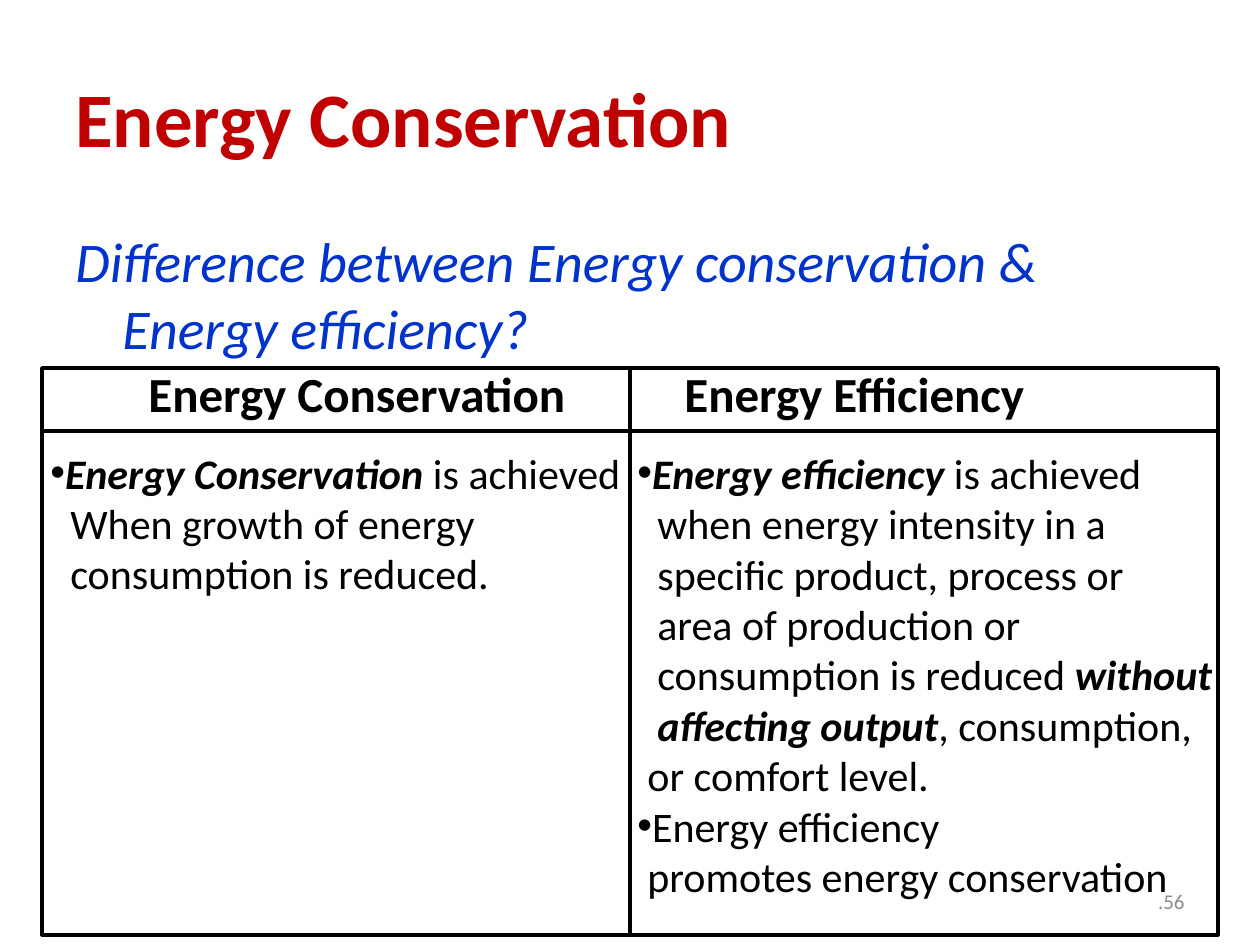
from dataclasses import dataclass

from lxml import etree
from pptx import Presentation
from pptx.dml.color import RGBColor
from pptx.enum.shapes import MSO_CONNECTOR, MSO_SHAPE
from pptx.enum.text import MSO_ANCHOR, MSO_AUTO_SIZE, PP_ALIGN
from pptx.oxml.ns import qn
from pptx.util import Pt

PX = 7257.14  # EMU per px, at 126 px to the inch
SPACE = 10  # px, width of one space in the comparison text


@dataclass(frozen=True)
class Theme:
    font: str = "Calibri"
    black: str = "000000"
    red: str = "C00000"
    blue: str = "0033CC"
    grey: str = "8C8C8C"
    title: int = 44
    question: int = 32
    heading: int = 28
    body: int = 24
    number: int = 12
    rule: int = 2


THEME = Theme()
STRONG = {"bold": True, "italic": True}

# Each line: indent in spaces, bulleted or not, runs of (text, format)
CONSERVATION = [
    (0, True, [("Energy Conservation ", STRONG), ("is achieved", {})]),
    (2, False, [("When growth of energy", {})]),
    (2, False, [("consumption is reduced.", {})]),
]
EFFICIENCY = [
    (0, True, [("Energy efficiency ", STRONG), ("is achieved", {})]),
    (2, False, [("when energy intensity in a", {})]),
    (2, False, [("specific product, process or", {})]),
    (2, False, [("area of production or", {})]),
    (2, False, [("consumption is reduced ", {}), ("without", STRONG)]),
    (2, False, [("affecting output", STRONG), (", consumption,", {})]),
    (1, False, [("or comfort level.", {})]),
    (0, True, [("Energy efficiency", {})]),
    (1, False, [("promotes energy conservation", {})]),
]


def emu(*lengths):
    return [round(length * PX) for length in lengths]


def add_run(paragraph, text, size, color, style):
    run = paragraph.add_run()
    run.text = text
    run.font.color.rgb = RGBColor.from_string(color)
    for name, value in {"name": THEME.font, "size": Pt(size), **style}.items():
        setattr(run.font, name, value)


def set_indent(paragraph, left, first=0):
    margin, indent = emu(left, first)
    properties = paragraph._p.get_or_add_pPr()
    properties.set("marL", str(margin))
    properties.set("indent", str(indent))
    return properties


def add_frame(slide, box, **frame_format):
    frame = slide.shapes.add_textbox(*emu(*box)).text_frame
    for name, value in {"word_wrap": True, **frame_format}.items():
        setattr(frame, name, value)
    return frame


def add_label(slide, box, text, size, color, style, align=PP_ALIGN.LEFT, **frame_format):
    paragraph = add_frame(slide, box, **frame_format).paragraphs[0]
    paragraph.alignment = align
    add_run(paragraph, text, size, color, style)
    return paragraph


def add_lines(slide, box, lines):
    frame = add_frame(slide, box, word_wrap=False, auto_size=MSO_AUTO_SIZE.SHAPE_TO_FIT_TEXT)
    for number, (spaces, bulleted, runs) in enumerate(lines):
        paragraph = frame.add_paragraph() if number else frame.paragraphs[0]
        paragraph.alignment = PP_ALIGN.LEFT
        properties = set_indent(paragraph, spaces * SPACE)
        if bulleted:
            font = etree.SubElement(properties, qn("a:buFont"))
            font.set("typeface", "Arial")
            etree.SubElement(properties, qn("a:buChar")).set("char", "•")
        for text, style in runs:
            add_run(paragraph, text, THEME.body, THEME.black, style)


def style_line(line):
    line.color.rgb = RGBColor.from_string(THEME.black)
    line.width = Pt(THEME.rule)


def add_border(slide, box):
    border = slide.shapes.add_shape(MSO_SHAPE.RECTANGLE, *emu(*box))
    border.shadow.inherit = False
    border.fill.background()
    style_line(border.line)


def add_rule(slide, *ends):
    rule = slide.shapes.add_connector(MSO_CONNECTOR.STRAIGHT, *emu(*ends))
    etree.SubElement(rule._element.spPr, qn("a:effectLst"))
    style_line(rule.line)


def main():
    deck = Presentation()
    deck.slide_width, deck.slide_height = emu(1260, 945)
    slide = deck.slides.add_slide(deck.slide_layouts[6])

    # Title and question
    question = add_label(slide, (63, 220, 1134, 624),
                         "Difference between Energy conservation & Energy efficiency?",
                         THEME.question, THEME.blue, {"italic": True})
    question.space_before = Pt(6.4)
    set_indent(question, 47, -47)
    add_label(slide, (63, 38, 1134, 157), "Energy Conservation", THEME.title, THEME.red,
              {"bold": True}, vertical_anchor=MSO_ANCHOR.MIDDLE)

    # Comparison frame with its two rules
    left, top, width, height = 42, 368, 1176, 567
    middle, heading_base = left + width // 2, top + 63
    add_border(slide, (left, top, width, height))
    add_rule(slide, middle, top, middle, top + height)
    add_rule(slide, left, heading_base, left + width, heading_base)

    # Column headings
    for x, span, heading in ((136, 447, "Energy Conservation"), (672, 370, "Energy Efficiency")):
        add_label(slide, (x, 357, span, 72), heading, THEME.heading, THEME.black,
                  {"bold": True}, word_wrap=False,
                  auto_size=MSO_AUTO_SIZE.SHAPE_TO_FIT_TEXT)

    # Column texts
    add_lines(slide, (38, 441, 610, 217), CONSERVATION)
    add_lines(slide, (625, 441, 601, 471), EFFICIENCY)

    # Slide number
    add_label(slide, (903, 876, 294, 50), ".56", THEME.number, THEME.grey, {},
              PP_ALIGN.RIGHT, vertical_anchor=MSO_ANCHOR.MIDDLE)

    deck.save("out.pptx")


if __name__ == "__main__":
    main()
